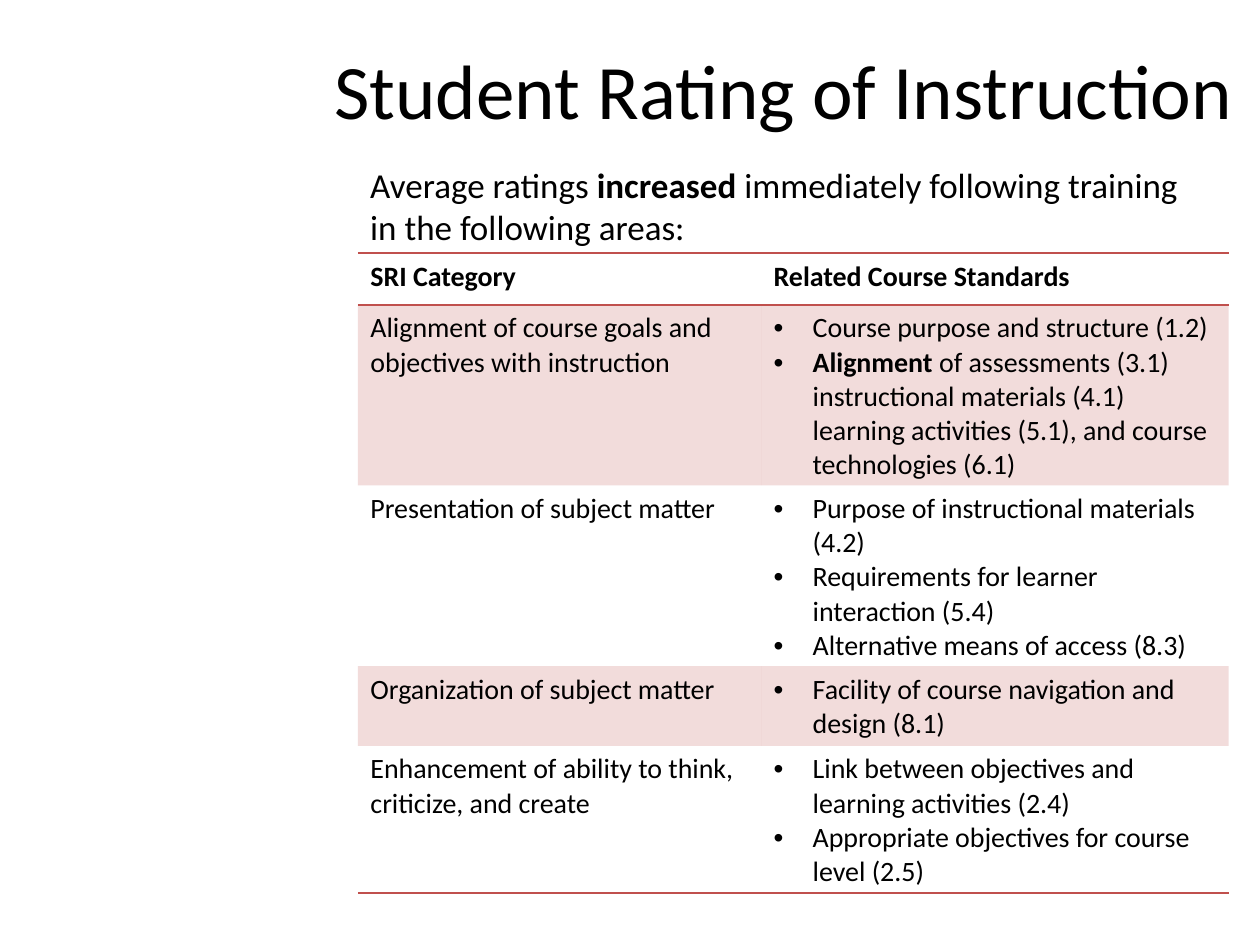
from lxml import etree
from pptx import Presentation
from pptx.dml.color import RGBColor
from pptx.enum import text
from pptx.oxml import ns
from pptx.util import Inches, Pt

BLACK = RGBColor(0x00, 0x00, 0x00)
RED = RGBColor(0xC0, 0x50, 0x4D)
FONT = "Calibri"
PLAIN_TABLE_STYLE = "{2D5ABB26-0587-4C30-8999-92F81FD0307C}"
BAND_OPACITY = 20

HEADINGS = ("SRI Category", "Related Course Standards")
RATINGS = [
    ("Alignment of course goals and objectives with instruction", [
        [("Course purpose and structure (1.2)", False)],
        [("Alignment", True),
         (" of assessments (3.1) instructional materials (4.1) learning "
          "activities (5.1), and course technologies (6.1)", False)],
    ]),
    ("Presentation of subject matter", [
        [("Purpose of instructional materials (4.2)", False)],
        [("Requirements for learner interaction (5.4)", False)],
        [("Alternative means of access (8.3)", False)],
    ]),
    ("Organization of subject matter", [
        [("Facility of course navigation and design (8.1)", False)],
    ]),
    ("Enhancement of ability to think, criticize, and create", [
        [("Link between objectives and learning activities (2.4)", False)],
        [("Appropriate objectives for course level (2.5)", False)],
    ]),
]


def add_runs(paragraph, runs, size):
    for words, bold in runs:
        run = paragraph.add_run()
        run.text = words
        run.font.name = FONT
        run.font.size = Pt(size)
        run.font.bold = bold
        run.font.color.rgb = BLACK


def add_bullet(paragraph):
    properties = paragraph._p.get_or_add_pPr()
    indent = Inches(0.31)
    properties.set("marL", str(indent))
    properties.set("indent", str(-indent))
    etree.SubElement(properties, ns.qn("a:buFont"), typeface="Arial")
    etree.SubElement(properties, ns.qn("a:buChar"), char="•")


def fill_cell(cell, paragraphs, bulleted=False):
    frame = cell.text_frame
    for index, runs in enumerate(paragraphs):
        paragraph = frame.add_paragraph() if index else frame.paragraphs[0]
        if bulleted:
            add_bullet(paragraph)
        add_runs(paragraph, runs, 16)


def add_border(cell, side):
    properties = cell._tc.get_or_add_tcPr()
    line = etree.SubElement(properties, ns.qn(f"a:{side}"), w=str(Pt(1)))
    fill = etree.SubElement(line, ns.qn("a:solidFill"))
    etree.SubElement(fill, ns.qn("a:srgbClr"), val=str(RED))


def shade_cell(cell):
    cell.fill.solid()
    cell.fill.fore_color.rgb = RED
    color = cell._tc.tcPr.find(".//" + ns.qn("a:srgbClr"))
    etree.SubElement(color, ns.qn("a:alpha"), val=str(BAND_OPACITY * 1000))


def place_title(slide, left, top, width, height):
    title = slide.shapes.title
    title.left, title.top, title.width, title.height = left, top, width, height
    title.text_frame.vertical_anchor = text.MSO_ANCHOR.MIDDLE
    paragraph = title.text_frame.paragraphs[0]
    paragraph.alignment = text.PP_ALIGN.CENTER
    add_runs(paragraph, [("Student Rating of Instruction", False)], 44)


def add_introduction(slide, left, top, width, height):
    frame = slide.shapes.add_textbox(left, top, width, height).text_frame
    frame.word_wrap = True
    frame.auto_size = text.MSO_AUTO_SIZE.SHAPE_TO_FIT_TEXT
    add_runs(frame.paragraphs[0], [
        ("Average ratings ", False),
        ("increased", True),
        (" immediately following training in the following areas:", False),
    ], 20)


def add_ratings_table(slide, left, top, width, row_height):
    row_count = len(RATINGS) + 1
    shape = slide.shapes.add_table(
        row_count, 2, left, top, width, row_height * row_count)
    table = shape.table
    table.first_row = False
    table.horz_banding = False
    table._tbl.tblPr.find(ns.qn("a:tableStyleId")).text = PLAIN_TABLE_STYLE
    table.columns[0].width = Inches(3.2)
    table.columns[1].width = width - Inches(3.2)

    for column, heading in enumerate(HEADINGS):
        fill_cell(table.cell(0, column), [[(heading, True)]])
        add_border(table.cell(0, column), "lnT")
        add_border(table.cell(0, column), "lnB")
        add_border(table.cell(row_count - 1, column), "lnB")

    for row, (category, standards) in enumerate(RATINGS, start=1):
        fill_cell(table.cell(row, 0), [[(category, False)]])
        fill_cell(table.cell(row, 1), standards, bulleted=True)
        for column in range(2):
            cell = table.cell(row, column)
            if row % 2:
                shade_cell(cell)
            else:
                cell.fill.background()


def main():
    presentation = Presentation()
    presentation.slide_width = Inches(10)
    presentation.slide_height = Inches(7.5)
    slide = presentation.slides.add_slide(presentation.slide_layouts[5])
    place_title(slide, Inches(2.44), Inches(0.02), Inches(7.56), Inches(1.37))
    add_introduction(
        slide, Inches(2.84), Inches(1.25), Inches(6.77), Inches(1.08))
    add_ratings_table(
        slide, Inches(2.84), Inches(2.01), Inches(6.91), Inches(0.41))
    presentation.save("out.pptx")


if __name__ == "__main__":
    main()
